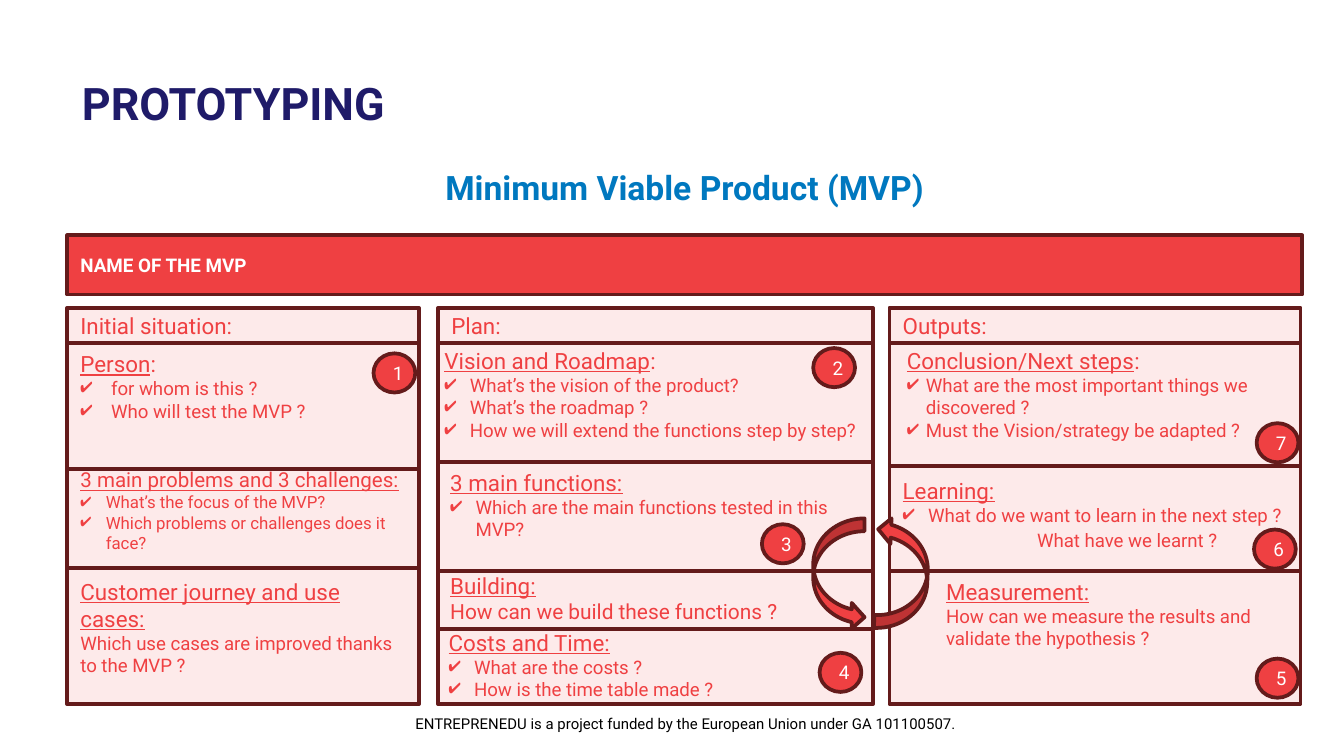
"""Build the Minimum Viable Product canvas slide."""
from dataclasses import dataclass

from lxml import etree
from pptx import Presentation
from pptx import util as u
from pptx.dml.color import RGBColor
from pptx.enum import shapes, text
from pptx.oxml.ns import qn


@dataclass(frozen=True)
class Theme:
    font: str = "Roboto"
    red: str = "EF4042"
    dark_red: str = "641B1B"
    pale: str = "FDEAEA"
    white: str = "FFFFFF"
    black: str = "000000"
    navy: str = "1F1B69"
    blue: str = "0078BF"
    title: float = 24
    subtitle: float = 18
    heading: float = 12
    small_heading: float = 11
    large_body: float = 11.2
    label: float = 10.1
    body: float = 10
    small_body: float = 9
    footer: float = 8
    border: float = 2


class Canvas:
    def __init__(self, slide, theme):
        self.slide, self.theme = slide, theme

    def add_words(self, paragraph, words, size, color, bold=False, underline=False):
        run = paragraph.add_run()
        run.text = words
        run.font.name, run.font.size = self.theme.font, u.Pt(size)
        run.font.color.rgb = RGBColor.from_string(color)
        run.font.bold, run.font.underline = bold, underline

    def figure(self, preset, box, fill, rotation=0):
        figure = self.slide.shapes.add_shape(preset, *map(u.Cm, box))
        figure.shadow.inherit = False
        figure.fill.solid()
        figure.fill.fore_color.rgb = RGBColor.from_string(fill)
        figure.line.color.rgb = RGBColor.from_string(self.theme.dark_red)
        figure.line.width = u.Pt(self.theme.border)
        figure.rotation = rotation
        return figure

    def panel(self, box, fill, words="", size=0, color="", bold=False):
        panel = self.figure(shapes.MSO_SHAPE.RECTANGLE, box, fill)
        if words:
            panel.text_frame.vertical_anchor = text.MSO_ANCHOR.MIDDLE
            label = panel.text_frame.paragraphs[0]
            label.alignment = text.PP_ALIGN.LEFT
            self.add_words(label, words, size, color, bold)

    def badge(self, left, top, number):
        badge = self.figure(shapes.MSO_SHAPE.OVAL, (left, top, 0.79, 0.74), self.theme.red)
        badge.text_frame.vertical_anchor = text.MSO_ANCHOR.MIDDLE
        digit = badge.text_frame.paragraphs[0]
        digit.alignment = text.PP_ALIGN.CENTER
        self.add_words(digit, str(number), self.theme.label, self.theme.white)

    def arrow(self, box, rotation=0):
        self.figure(shapes.MSO_SHAPE.CURVED_RIGHT_ARROW, box, self.theme.red, rotation)

    def frame(self, box):
        frame = self.slide.shapes.add_textbox(*map(u.Cm, box)).text_frame
        frame.word_wrap = True
        frame.auto_size = text.MSO_AUTO_SIZE.SHAPE_TO_FIT_TEXT
        return frame

    def caption(self, box, words, size, color, bold=True, centred=True, padding=0.13):
        frame = self.frame(box)
        frame.margin_top = frame.margin_bottom = u.Cm(padding)
        line = frame.paragraphs[0]
        line.alignment = text.PP_ALIGN.CENTER if centred else text.PP_ALIGN.LEFT
        self.add_words(line, words, size, color, bold)

    def check(self, paragraph, hang):
        properties = paragraph._p.get_or_add_pPr()
        properties.set("marL", str(u.Cm(hang)))
        properties.set("indent", str(-u.Cm(hang)))
        color = etree.SubElement(properties, qn("a:buClr"))
        etree.SubElement(color, qn("a:srgbClr"), val=self.theme.red)
        etree.SubElement(properties, qn("a:buChar"), char="✔")

    def note(self, box, heading, lines, hang=0.0, tail="", heading_size=None, size=None):
        style = self.theme
        frame = self.frame(box)
        first = frame.paragraphs[0]
        self.add_words(first, heading, heading_size or style.heading, style.red, underline=True)
        if tail:
            self.add_words(first, tail, style.heading, style.red)
        for words in lines:
            line = frame.add_paragraph()
            if hang:
                self.check(line, hang)
            self.add_words(line, words, size or style.body, style.red)
        return frame

    def indented(self, frame, words, indent):
        line = frame.add_paragraph()
        line._p.get_or_add_pPr().set("marL", str(u.Cm(indent)))
        line.space_before = u.Pt(1.5)
        self.add_words(line, words, self.theme.body, self.theme.red)


def main():
    deck = Presentation()
    deck.slide_width, deck.slide_height = u.Cm(25.4), u.Cm(14.29)
    theme = Theme()
    canvas = Canvas(deck.slides.add_slide(deck.slide_layouts[6]), theme)

    canvas.panel((1.27, 4.45, 23.34, 1.12), theme.red, "NAME OF THE MVP",
                 theme.label, theme.white, True)
    columns = [
        ("Initial situation:", 1.27, 6.65, [(8.86, 2.41), (10.74, 2.57)]),
        ("Plan:", 8.28, 8.22, [(8.74, 2.18), (10.8, 1.09), (11.89, 1.42)]),
        ("Outputs:", 16.81, 7.77, [(8.81, 1.98), (10.8, 2.51)]),
    ]
    for name, left, width, rows in columns:
        canvas.panel((left, 5.87, width, 3), theme.pale)
        canvas.panel((left, 5.82, width, 0.66), theme.pale, name, theme.heading, theme.red)
        for top, height in rows:
            canvas.panel((left, top, width, height), theme.pale)

    canvas.note((1.27, 6.5, 6.35, 1.63), "Person",
                ["for whom is this ?", "Who will test the MVP ?"], 0.58, ":")
    canvas.note((1.27, 8.71, 6.65, 1.88), "3 main problems and 3 challenges:",
                ["What’s the focus of the MVP?", "Which problems or challenges does it face?"],
                0.48, heading_size=theme.small_heading, size=theme.small_body)
    canvas.note((1.27, 10.8, 6.65, 2.13), "Customer journey and use cases:",
                ["Which use cases are improved thanks to the MVP ?"])
    canvas.note((8.15, 6.43, 8.69, 2.06), "Vision and Roadmap",
                ["What’s the vision of the product?", "What’s the roadmap ?",
                 "How we will extend the functions step by step?"], 0.48, ":")
    canvas.note((8.26, 8.74, 8.59, 1.63), "3 main functions:",
                ["Which are the main functions tested in this MVP?"], 0.48)
    canvas.note((8.26, 10.69, 8.2, 1.24), "Building:",
                ["How can we build these functions ?"], size=theme.large_body)
    canvas.note((8.23, 11.76, 7.47, 1.63), "Costs and Time:",
                ["What are the costs ?", "How is the time table made ?"], 0.48)
    canvas.note((16.89, 6.43, 7.77, 2.06), "Conclusion/Next steps",
                ["What are the most important things we discovered ?",
                 "Must the Vision/strategy be adapted ?"], 0.36, ":")
    learning = canvas.note((16.81, 8.89, 7.77, 2.11), "Learning:",
                           ["What do we want to learn in the next step ?"], 0.48)
    canvas.indented(learning, "What have we learnt ?", 2.54)
    canvas.note((17.63, 10.8, 7.14, 1.63), "Measurement:",
                ["How can we measure the results and validate the hypothesis ?"])

    steps = [(7.06, 6.68), (15.37, 6.58), (14.4, 9.91), (15.49, 12.34),
             (23.75, 12.45), (23.7, 10.01), (23.75, 8)]
    for number, (left, top) in enumerate(steps, 1):
        canvas.badge(left, top, number)
    canvas.arrow((15.37, 9.8, 0.97, 2.11))
    canvas.arrow((16.56, 9.78, 0.97, 2.11), 182.5)

    canvas.caption((3.96, 13.34, 18.01, 0.86),
                   "ENTREPRENEDU is a project funded by the European Union under GA 101100507.",
                   theme.footer, theme.black, bold=False, padding=0.25)
    canvas.caption((1.3, 1.3, 15.39, 1.27), "PROTOTYPING", theme.title, theme.navy, centred=False)
    canvas.caption((0.48, 3.02, 24.92, 1.02), "Minimum Viable Product (MVP)",
                   theme.subtitle, theme.blue)
    deck.save("out.pptx")


if __name__ == "__main__":
    main()
